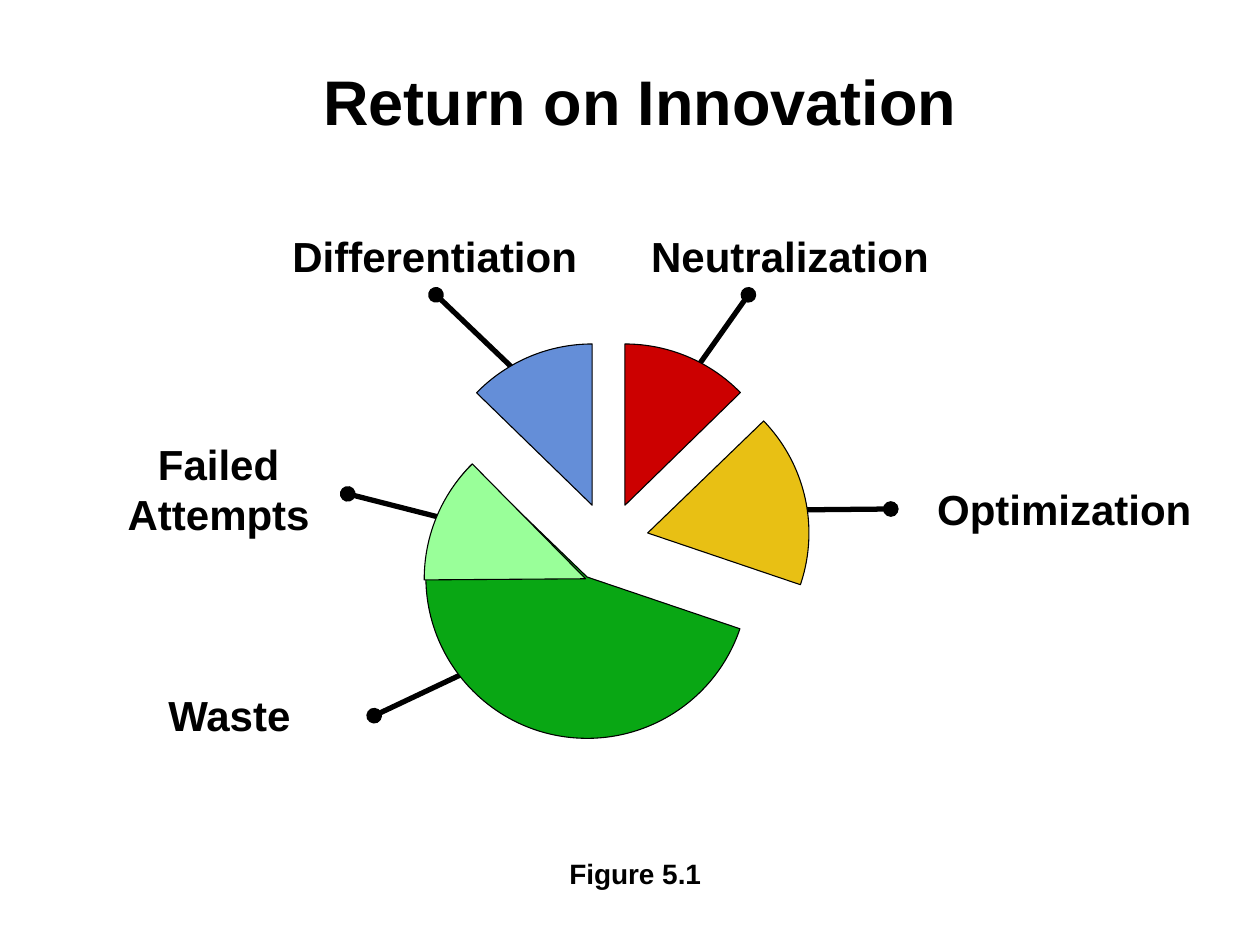
from math import cos, radians, sin, tan

from pptx import Presentation
from pptx.dml.color import RGBColor
from pptx.enum.shapes import MSO_CONNECTOR
from pptx.enum.text import MSO_ANCHOR, MSO_AUTO_SIZE, PP_ALIGN
from pptx.oxml.ns import qn
from pptx.util import Inches, Pt
from lxml import etree

LINE = MSO_CONNECTOR.STRAIGHT
MIDDLE = MSO_ANCHOR.MIDDLE
GROW = MSO_AUTO_SIZE.SHAPE_TO_FIT_TEXT
LEFT, CENTER = PP_ALIGN.LEFT, PP_ALIGN.CENTER

BLACK = RGBColor(0x00, 0x00, 0x00)
RED = RGBColor(0xCC, 0x00, 0x00)
GOLD = RGBColor(0xE8, 0xC0, 0x14)
GREEN = RGBColor(0x09, 0xA7, 0x14)
BLUE = RGBColor(0x64, 0x8E, 0xD8)
LIME = RGBColor(0x99, 0xFF, 0x99)

RADIUS = 1.28

# Slices: tip in the pie's box, start and end in degrees clockwise from the top,
# rotation of the whole slice, colour
SLICES = [
    ((1.59, 1.28), 0, 45.7, 0, RED),
    ((1.77, 1.50), 46, 108.7, 0, GOLD),
    ((1.29, 1.85), 108.7, 314, 0, GREEN),
    ((1.33, 1.28), 314.2, 360, 0, BLUE),
    ((0.96, 2.37), 314.2, 360, 315.4, LIME),
]

# Callouts: text, label box, alignment, line from label to slice
CALLS = [
    ("Failed\nAttempts", (0, 1.65, 1.65, 0.9), CENTER, (1.85, 2.14, 2.91, 2.41)),
    ("Waste", (0.32, 3.64, 1.18, 0.5), CENTER, (2.06, 3.90, 3.33, 3.30)),
    ("Differentiation", (1.31, 0, 2.46, 0.5), CENTER, (2.55, 0.56, 3.43, 1.40)),
    ("Neutralization", (4.14, 0, 2.44, 0.5), CENTER, (5.03, 0.56, 4.40, 1.45)),
    ("Optimization", (6.43, 2.01, 2.24, 0.5), LEFT, (6.16, 2.26, 5.06, 2.27)),
]


def write(frame, text, size=24, align=CENTER, wrap=False):
    frame.word_wrap = wrap
    frame.text = text
    for para in frame.paragraphs:
        para.alignment = align
        font = para.runs[0].font
        font.name, font.size, font.bold = "Arial", Pt(size), True
        font.color.rgb = BLACK


def title(slide, box):
    head = slide.shapes.title
    head.left, head.top, head.width, head.height = map(Inches, box)
    write(head.text_frame, "Return on Innovation", size=36, wrap=True)
    head.text_frame.vertical_anchor = MIDDLE


def label(slide, text, box, **style):
    shape = slide.shapes.add_textbox(*map(Inches, box))
    write(shape.text_frame, text, **style)
    shape.text_frame.auto_size = GROW


def pointer(slide, ends):
    line = slide.shapes.add_connector(LINE, *map(Inches, ends))
    line.line.color.rgb = BLACK
    line.line.width = Pt(3)
    # Round ends, no shadow
    stroke = line.line._get_or_add_ln()
    for tag in ("a:headEnd", "a:tailEnd"):
        etree.SubElement(stroke, qn(tag), type="oval")
    etree.SubElement(line._element.spPr, qn("a:effectLst"))


def callouts(slide, left, top):
    for text, (x, y, w, h), align, (x1, y1, x2, y2) in CALLS:
        pointer(slide, (left + x1, top + y1, left + x2, top + y2))
        label(slide, text, (left + x, top + y, w, h), align=align)


def bend(shape, edge, x, y, start, end):
    """Turn one straight edge into a round arc about (x, y)."""
    pull = 4 / 3 * tan((end - start) / 4)
    knobs = []
    for t, k in ((start, pull), (end, -pull)):
        knobs.append((x + RADIUS * (sin(t) + k * cos(t)),
                      y - RADIUS * (cos(t) - k * sin(t))))
    edge.tag = qn("a:cubicBezTo")
    for i, (kx, ky) in enumerate(knobs):
        spot = etree.Element(qn("a:pt"), x=str(Inches(kx) - shape.left),
                             y=str(Inches(ky) - shape.top))
        edge.insert(i, spot)


def wedge(slide, x, y, start, end, turn, color):
    # Split the arc at each quarter turn, so its corners span its full size
    stops = [start, *(q for q in (90, 180, 270) if start < q < end), end]
    stops = [radians(s) for s in stops]
    rim = [(Inches(x + RADIUS * sin(t)), Inches(y - RADIUS * cos(t))) for t in stops]
    pen = slide.shapes.build_freeform(*rim[0])
    pen.add_line_segments([*rim[1:], (Inches(x), Inches(y))], close=True)
    shape = pen.convert_to_shape()
    edges = list(shape._element.iter(qn("a:lnTo")))
    for edge, a, b in zip(edges, stops, stops[1:]):
        bend(shape, edge, x, y, a, b)
    shape.rotation = turn
    shape.shadow.inherit = False
    shape.fill.solid()
    shape.fill.fore_color.rgb = color
    shape.line.color.rgb = BLACK
    shape.line.width = Pt(0.63)


def pie(slide, left, top):
    for (x, y), *rest in SLICES:
        wedge(slide, left + x, top + y, *rest)


def main():
    deck = Presentation()
    deck.slide_width, deck.slide_height = Inches(10), Inches(7.5)
    slide = deck.slides.add_slide(deck.slide_layouts[5])
    title(slide, (0.46, 0.26, 9.24, 1.08))
    # Callouts come first so the slices cover their inner ends
    callouts(slide, 0.91, 1.78)
    pie(slide, 3.37, 2.73)
    # Caption
    label(slide, "Figure 5.1", (4.42, 6.75, 1.26, 0.37), size=16, align=LEFT)
    deck.save("out.pptx")


if __name__ == "__main__":
    main()
